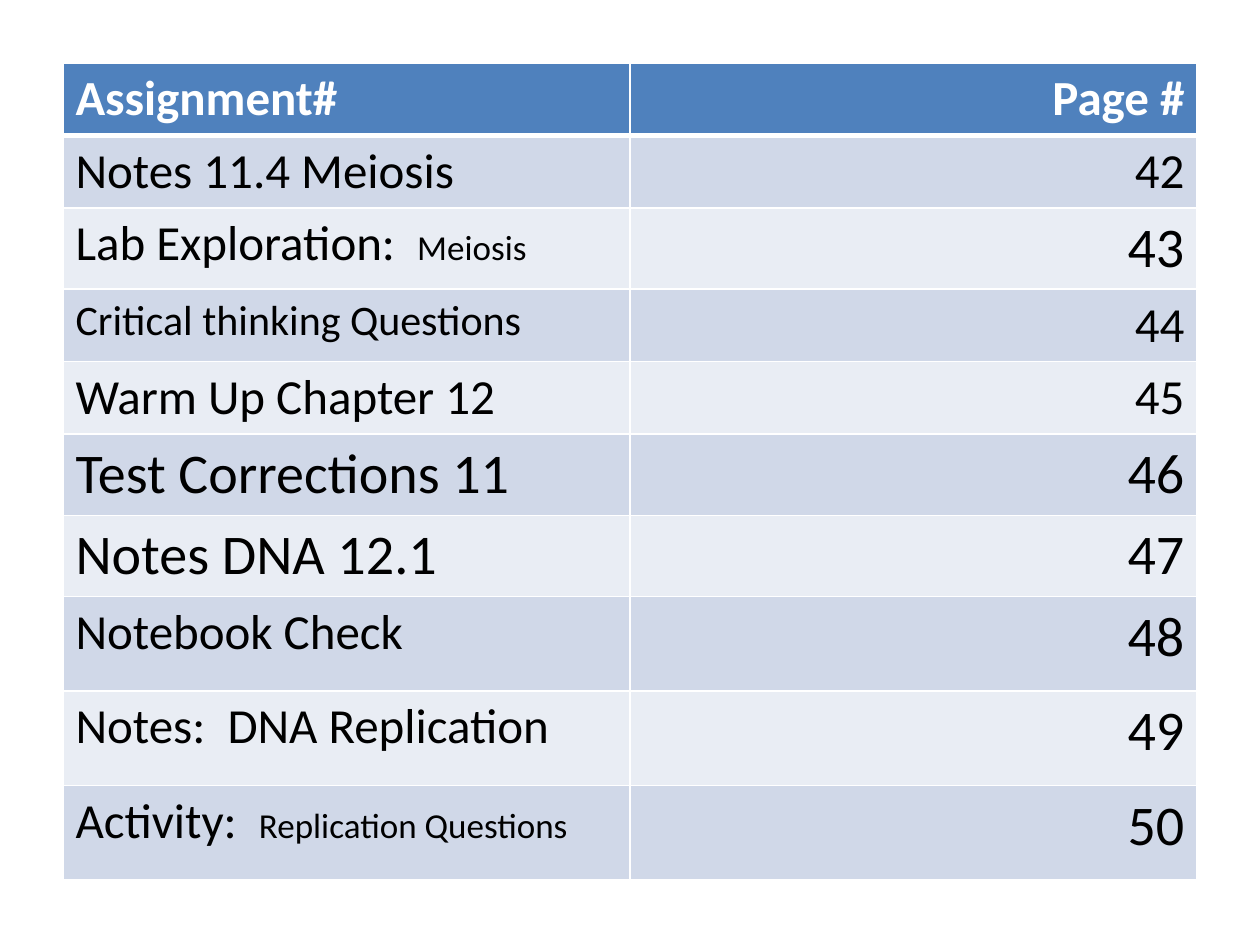
import pptx
import pptx.dml.color
import pptx.enum.text
import pptx.oxml.ns
import pptx.util
from lxml import etree
from pptx.util import Inches

RGBColor = pptx.dml.color.RGBColor
PP_ALIGN = pptx.enum.text.PP_ALIGN

WHITE = RGBColor(0xFF, 0xFF, 0xFF)
BLACK = RGBColor(0x00, 0x00, 0x00)
HEADER_BLUE = RGBColor(0x4F, 0x81, 0xBD)
BANDS = (RGBColor(0xE9, 0xED, 0xF4), RGBColor(0xD0, 0xD8, 0xE8))
FONT = "Calibri"

ROWS = [
    (0.56, [("Assignment#", 28)], ("Page #", 28)),
    (0.56, [("Notes 11.4 Meiosis", 28)], ("42", 28)),
    (0.56, [("Lab Exploration:  ", 28), ("Meiosis", 20)], ("43", 32)),
    (0.56, [("Critical thinking Questions", 24)], ("44", 28)),
    (0.56, [("Warm Up Chapter 12", 28)], ("45", 28)),
    (0.61, [("Test Corrections 11", 32)], ("46", 32)),
    (0.61, [("Notes DNA 12.1", 32)], ("47", 32)),
    (0.75, [("Notebook Check", 28)], ("48", 32)),
    (0.75, [("Notes:  DNA Replication", 28)], ("49", 32)),
    (0.75, [("Activity:  ", 28), ("Replication Questions", 20)], ("50", 32)),
]


def set_borders(cell, widths):
    tc_pr = cell._tc.get_or_add_tcPr()
    for side, width in zip("LRTB", widths):
        ln = etree.SubElement(tc_pr, pptx.oxml.ns.qn(f"a:ln{side}"))
        ln.set("w", str(pptx.util.Pt(width)))
        fill = etree.SubElement(ln, pptx.oxml.ns.qn("a:solidFill"))
        etree.SubElement(fill, pptx.oxml.ns.qn("a:srgbClr")).set("val", str(WHITE))


def fill_cell(cell, runs, align, row):
    header = row == 0
    set_borders(cell, (1, 1, 3 if row == 1 else 1, 3 if header else 1))
    cell.fill.solid()
    cell.fill.fore_color.rgb = HEADER_BLUE if header else BANDS[row % 2]
    p = cell.text_frame.paragraphs[0]
    p.alignment = align
    for text, size in runs:
        r = p.add_run()
        r.text = text
        r.font.name = FONT
        r.font.size = pptx.util.Pt(size)
        r.font.bold = header
        r.font.color.rgb = WHITE if header else BLACK


def add_contents_table(slide, left, top, width, height):
    table = slide.shapes.add_table(len(ROWS), 2, left, top, width, height).table
    for column in table.columns:
        column.width = width // 2
    for i, (row_height, assignment, page) in enumerate(ROWS):
        table.rows[i].height = Inches(row_height)
        fill_cell(table.cell(i, 0), assignment, PP_ALIGN.LEFT, i)
        fill_cell(table.cell(i, 1), [page], PP_ALIGN.RIGHT, i)


def main():
    prs = pptx.Presentation()
    prs.slide_width, prs.slide_height = Inches(10), Inches(7.5)
    slide = prs.slides.add_slide(prs.slide_layouts[6])
    add_contents_table(slide, Inches(0.5), Inches(0.5), Inches(9), Inches(6.42))
    prs.save("out.pptx")


if __name__ == "__main__":
    main()
